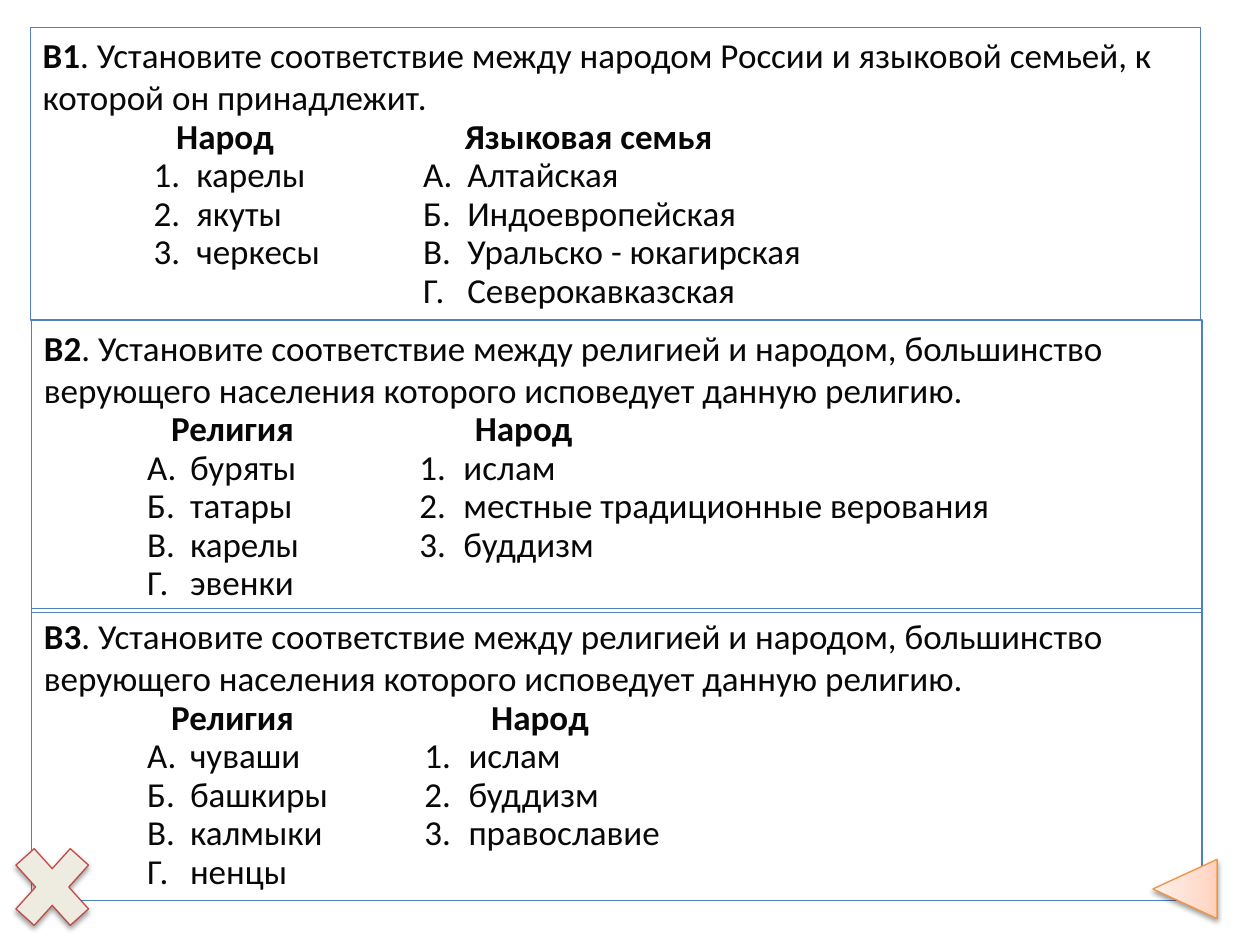
from copy import deepcopy

from lxml.etree import SubElement as Sub
from pptx import Presentation
from pptx.dml.color import RGBColor
from pptx.enum.shapes import MSO_SHAPE as Shape
from pptx.oxml.ns import qn
from pptx.util import Inches, Pt

RELIGION = (". Установите соответствие между религией и народом, большинство "
            "верующего населения которого исповедует данную религию.")
FAMILY = (". Установите соответствие между народом России и языковой семьей, "
          "к которой он принадлежит.")


def color(code):
    return RGBColor.from_string(code)


def write(para, text, size=20, bold=False, tint="080808"):
    run = para.add_run()
    run.text = text
    font = run.font
    font.name, font.size, font.bold = "Calibri", Pt(size), bold
    font.color.rgb = color(tint)


def set_tabs(para, stops):
    """Give the paragraph left tab stops, in inches."""
    tabs = Sub(para._p.get_or_add_pPr(), qn("a:tabLst"))
    for stop in stops:
        Sub(tabs, qn("a:tab"), pos=str(Inches(stop)), algn="l")


def add_shade(shape):
    """Cast a soft shadow straight down."""
    shape.shadow.inherit = False
    effects = shape._element.spPr.find(qn("a:effectLst"))
    shade = Sub(effects, qn("a:outerShdw"), blurRad=str(Pt(3.1)),
                dist=str(Pt(1.6)), dir="5400000", rotWithShape="0")
    tint = Sub(shade, qn("a:srgbClr"), val="000000")
    Sub(tint, qn("a:alpha"), val="38000")


class Page:
    def __init__(self, slide, line="4F81BD", width=0.75):
        self.slide, self.line, self.width = slide, line, width

    def edge(self, shape, tint):
        shape.line.color.rgb = color(tint)
        shape.line.width = Pt(self.width)

    def task(self, left, top, name, text, heads, rows, head_tabs, cols):
        """Draw a framed matching task with two lettered or numbered lists."""
        box = self.slide.shapes.add_textbox(
            Inches(left), Inches(top), Inches(9.29), Inches(2.32))
        self.edge(box, self.line)
        frame = box.text_frame
        frame.word_wrap = True
        intro = frame.paragraphs[0]
        write(intro, name, bold=True)
        write(intro, text)
        first, second = cols
        row_tabs = (first, first + 0.34, second, second + 0.35)
        lines = [(heads, head_tabs, True)]
        lines += [(row, row_tabs, False) for row in rows]
        for cells, stops, bold in lines:
            para = frame.add_paragraph()
            para.line_spacing = Pt(22)
            set_tabs(para, stops)
            write(para, "".join("\t" + cell for cell in cells), bold=bold)

    def button(self, kind, left, top, width, height, line):
        shape = self.slide.shapes.add_shape(
            kind, Inches(left), Inches(top), Inches(width), Inches(height))
        self.edge(shape, line)
        add_shade(shape)
        return shape

    def back(self):
        arrow = self.button(Shape.ISOSCELES_TRIANGLE, 9.17, 6.8, 0.47, 0.51, "F69240")
        arrow.rotation = 270
        fill = arrow.fill
        fill.gradient()
        fill.gradient_angle = 90
        stops = arrow._element.spPr.find(qn("a:gradFill")).find(qn("a:gsLst"))
        stops.append(deepcopy(stops[-1]))
        tints = ((0, "FFD2BD"), (0.35, "FFDED0"), (1, "FFF2ED"))
        for stop, (place, tint) in zip(fill.gradient_stops, tints):
            stop.position = place
            stop.color.rgb = color(tint)

    def cross(self):
        mark = self.button(Shape.MATH_MULTIPLY, 0, 6.58, 0.83, 0.92, "BF4C48")
        mark.adjustments[0] = 0.235
        mark.fill.solid()
        mark.fill.fore_color.rgb = color("EEECE1")


def main():
    deck = Presentation()
    deck.slide_width, deck.slide_height = Inches(10), Inches(7.5)
    page = Page(deck.slides.add_slide(deck.slide_layouts[6]))

    page.task(0.25, 4.83, "В3", RELIGION, ("Религия", "Народ"), [
        ("А.", "чуваши", "1.", "ислам"),
        ("Б.", "башкиры", "2.", "буддизм"),
        ("В.", "калмыки", "3.", "православие"),
        ("Г.", "ненцы"),
    ], head_tabs=(1.01, 3.55), cols=(0.82, 3.02))
    page.back()
    page.task(0.24, 0.22, "В1", FAMILY, ("Народ", "Языковая семья"), [
        ("1.", "карелы", "А.", "Алтайская"),
        ("2.", "якуты", "Б.", "Индоевропейская"),
        ("3.", "черкесы", "В.", "Уральско - юкагирская"),
        ("", "", "Г.", "Северокавказская"),
    ], head_tabs=(1.06, 3.35), cols=(0.88, 3.02))
    page.task(0.25, 2.54, "В2", RELIGION, ("Религия", "Народ"), [
        ("А.", "буряты", "1.", "ислам"),
        ("Б.", "татары", "2.", "местные традиционные верования"),
        ("В.", "карелы", "3.", "буддизм"),
        ("Г.", "эвенки"),
    ], head_tabs=(1.01, 3.42), cols=(0.82, 2.98))
    page.cross()

    deck.save("out.pptx")


if __name__ == "__main__":
    main()
